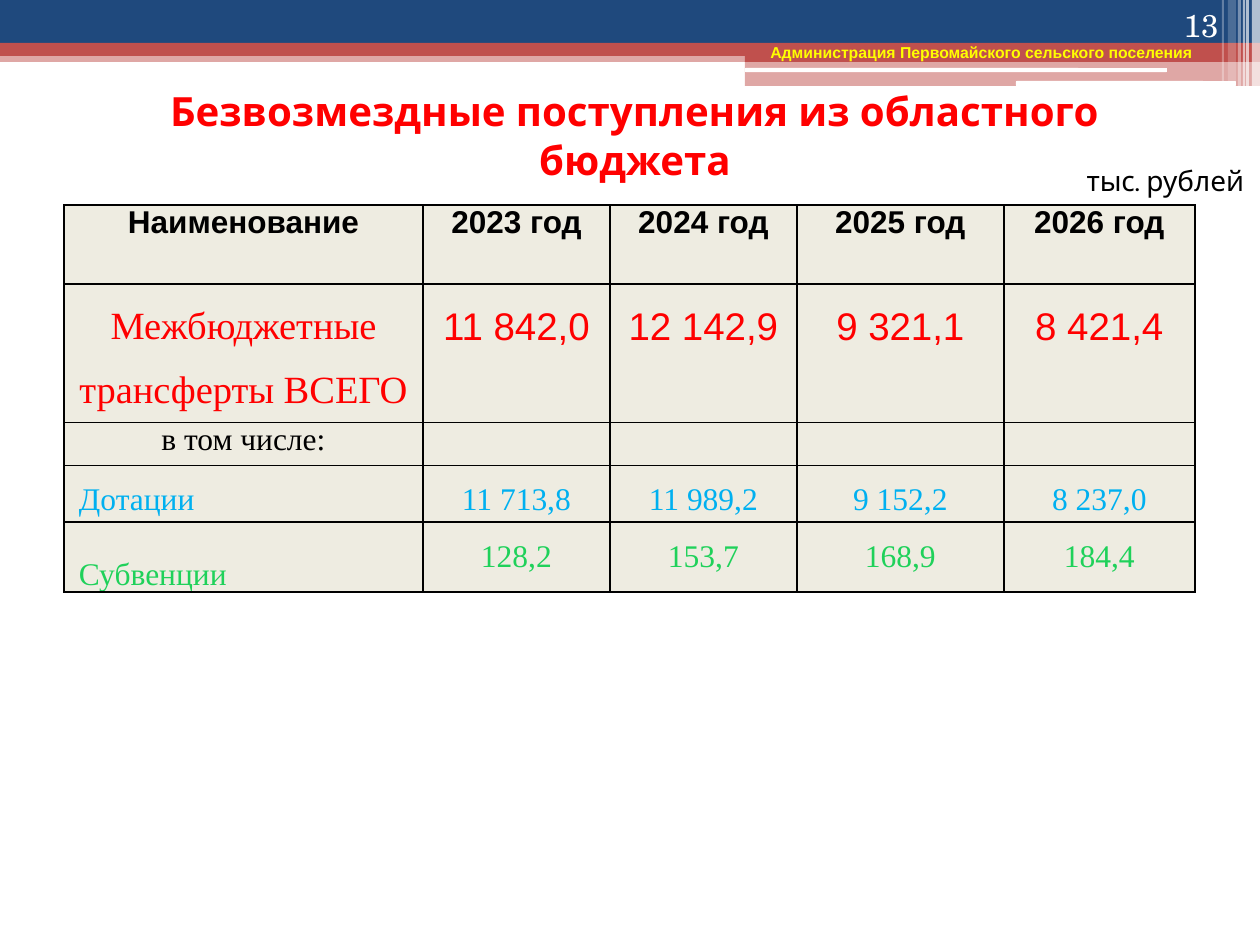
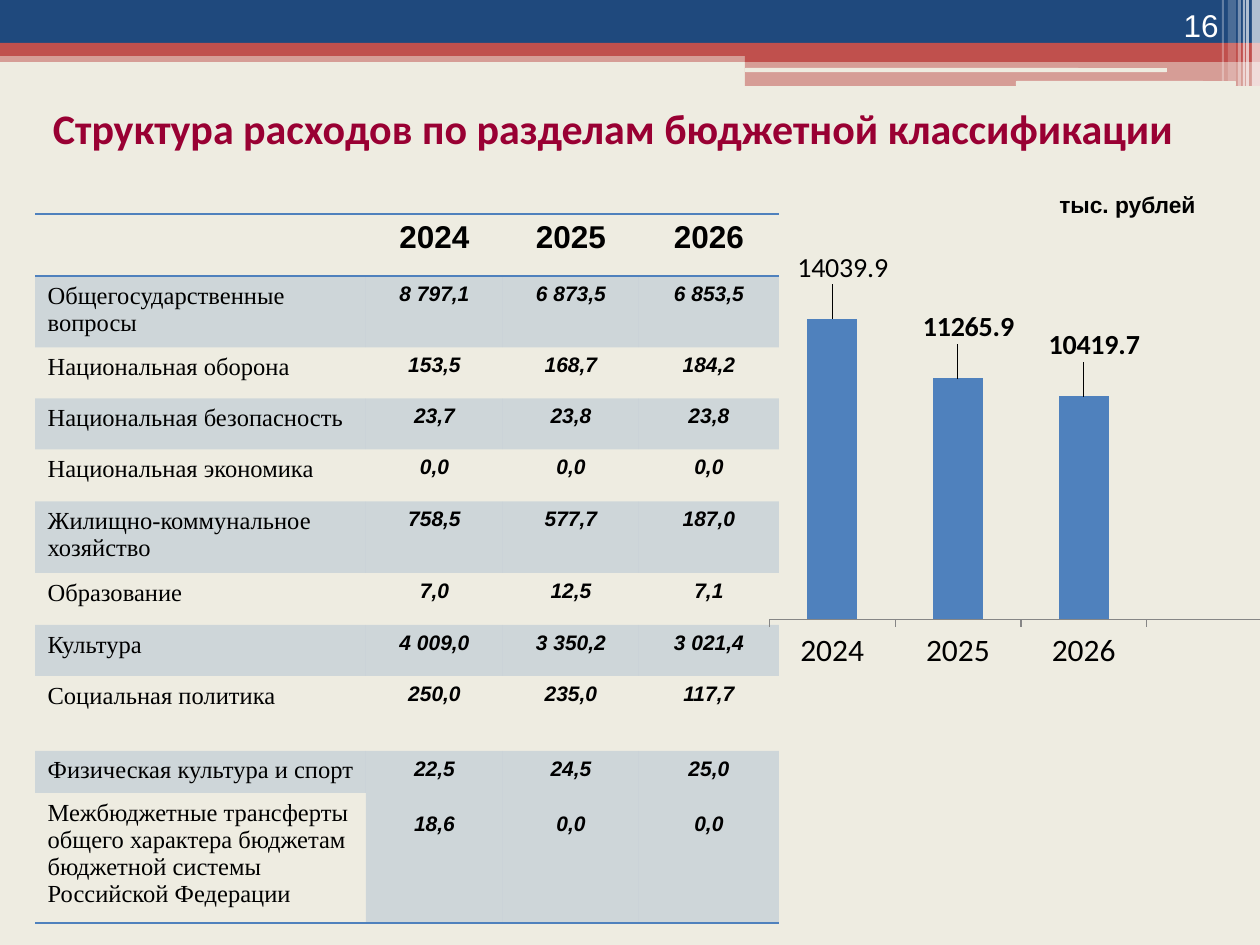
from lxml import etree
from pptx import Presentation
from pptx.chart.data import CategoryChartData
from pptx.dml.color import RGBColor
from pptx.enum.chart import XL_CHART_TYPE, XL_LABEL_POSITION, XL_TICK_MARK
from pptx.enum.shapes import MSO_SHAPE
from pptx.enum.text import MSO_ANCHOR, MSO_AUTO_SIZE, PP_ALIGN
from pptx.oxml import parse_xml
from pptx.oxml.ns import nsdecls, qn
from pptx.util import Pt

PX = 7257
LEFT, CENTER, RIGHT = PP_ALIGN.LEFT, PP_ALIGN.CENTER, PP_ALIGN.RIGHT
TOP, MIDDLE, BOTTOM = MSO_ANCHOR.TOP, MSO_ANCHOR.MIDDLE, MSO_ANCHOR.BOTTOM
RECT, ROUND = MSO_SHAPE.RECTANGLE, MSO_SHAPE.ROUNDED_RECTANGLE
NAVY, BRICK, BLUE, CREAM = "1F497D", "C0504D", "4F81BD", "EEECE1"
WHITE, BLACK, RED, SKY, GREEN = "FFFFFF", "000000", "FF0000", "00B0F0", "1FD15A"
ARIAL, TIMES, KARLA, CALIBRI = "Arial", "Times New Roman", "Karla", "Calibri"
NO_GRID = "{2D5ABB26-0587-4C30-8999-92F81FD0307C}"
rgb = RGBColor.from_string


def paint(fill, colour, opacity=100):
    fill.solid()
    fill.fore_color.rgb = rgb(colour)
    if opacity < 100:
        tint = fill._xPr.find(qn("a:solidFill"))[0]
        etree.SubElement(tint, qn("a:alpha"), val=str(opacity * 1000))


def write(para, text, size, font, colour=BLACK, bold=False, italic=False, align=CENTER):
    para.alignment = align
    span = para.add_run()
    span.text = text
    span.font.size = Pt(size)
    span.font.name = font
    span.font.color.rgb = rgb(colour)
    span.font.bold = bold
    span.font.italic = italic


deck = Presentation()
deck.slide_width, deck.slide_height = 1260 * PX, 945 * PX
title_only = deck.slide_layouts[5]
income = deck.slides.add_slide(title_only)
spending = deck.slides.add_slide(title_only)

bands = [
    (0, 50, 1260, 12, BRICK, 50),
    (0, 0, 1260, 43, NAVY, 100),
    (0, 43, 1260, 13, BRICK, 100),
    (745, 49, 515, 13, BRICK, 100),
    (745, 61, 515, 25, BRICK, 50),
]
gaps = [(745, 68, 422, 4), (1016, 81, 220, 5)]
stripes = [
    (1252, 8, 86, 65), (1246, 3, 86, 65), (1243, 2, 86, 60),
    (1238, 3, 86, 40), (1228, 8, 81, 20), (1222, 2, 81, 30),
]
for page, ground in ((income, WHITE), (spending, CREAM)):
    paint(page.background.fill, ground)
    parts = [(RECT, *band) for band in bands]
    parts += [(ROUND, *gap, ground, 100) for gap in gaps]
    parts += [(RECT, x, 0, w, h, WHITE, opacity) for x, w, h, opacity in stripes]
    for kind, x, y, w, h, colour, opacity in parts:
        shape = page.shapes.add_shape(kind, x * PX, y * PX, w * PX, h * PX)
        shape.shadow.inherit = False
        shape.line.fill.background()
        paint(shape.fill, colour, opacity)

titles = [
    (income, "Безвозмездные поступления из областного бюджета",
     (60, 76, 1150, 118), 23, KARLA, RED),
    (spending, "Структура расходов по разделам бюджетной классификации",
     (0, 96, 1226, 64), 24, CALIBRI, "990033"),
]
for page, text, (x, y, w, h), size, font, colour in titles:
    title = page.shapes.title
    title.left, title.top, title.width, title.height = x * PX, y * PX, w * PX, h * PX
    frame = title.text_frame
    frame.auto_size = MSO_AUTO_SIZE.NONE
    frame.vertical_anchor = MIDDLE
    write(frame.paragraphs[0], text, size, font, colour, bold=True)

number_box, unit = (1126, 0, 105, 50), "тыс. рублей"
labels = [
    (income, "13", number_box, BOTTOM, (18, "TeX Gyre Schola", WHITE, False, False, RIGHT)),
    (income, "Администрация Первомайского сельского поселения", (758, 37, 470, 50), TOP,
     (9, ARIAL, "FFFF00", True, False, LEFT)),
    (income, unit, (1071, 165, 189, 30), MIDDLE, (16, KARLA)),
    (spending, "16", number_box, BOTTOM, (18, ARIAL, WHITE, False, False, RIGHT)),
    (spending, unit, (1047, 185, 189, 40), TOP, (13, ARIAL, BLACK, True, False, LEFT)),
]
for page, text, (x, y, w, h), anchor, style in labels:
    box = page.shapes.add_textbox(x * PX, y * PX, w * PX, h * PX)
    box.text_frame.word_wrap = True
    box.text_frame.vertical_anchor = anchor
    write(box.text_frame.paragraphs[0], text, *style)

income_rows = [
    ["Наименование", "2023 год", "2024 год", "2025 год", "2026 год"],
    ["Межбюджетные трансферты ВСЕГО", "11 842,0", "12 142,9", "9 321,1", "8 421,4"],
    ["в том числе:", "", "", "", ""],
    ["Дотации", "11 713,8", "11 989,2", "9 152,2", "8 237,0"],
    ["Субвенции", "128,2", "153,7", "168,9", "184,4"],
]
spending_rows = [
    ["", "2024", "2025", "2026"],
    ["Общегосударственные вопросы", "8 797,1", "6 873,5", "6 853,5"],
    ["Национальная оборона", "153,5", "168,7", "184,2"],
    ["Национальная безопасность", "23,7", "23,8", "23,8"],
    ["Национальная экономика", "0,0", "0,0", "0,0"],
    ["Жилищно-коммунальное хозяйство", "758,5", "577,7", "187,0"],
    ["Образование", "7,0", "12,5", "7,1"],
    ["Культура", "4 009,0", "3 350,2", "3 021,4"],
    ["Социальная политика", "250,0", "235,0", "117,7"],
    ["Физическая культура и спорт", "22,5", "24,5", "25,0"],
    ["Межбюджетные трансферты общего характера бюджетам бюджетной системы "
     "Российской Федерации", "18,6", "0,0", "0,0"],
]
layouts = [
    (income, 64, 205, [359, 187, 187, 207, 191], [79, 128, 43, 52, 70]),
    (spending, 35, 214, [331, 137, 136, 140],
     [62, 71, 51, 51, 52, 71, 52, 51, 75, 40, 120]),
]
tables = []
for page, x, y, widths, heights in layouts:
    holder = page.shapes.add_table(len(heights), len(widths), x * PX, y * PX,
                                   sum(widths) * PX, sum(heights) * PX)
    table = holder.table
    table.first_row = table.horz_banding = False
    table._tbl.tblPr.find(qn("a:tableStyleId")).text = NO_GRID
    for column, width in zip(table.columns, widths):
        column.width = width * PX
    for row, height in zip(table.rows, heights):
        row.height = height * PX
    tables.append(table)
income_table, spending_table = tables

borders = []
row_colours = [BLACK, RED, BLACK, SKY, GREEN]
for r, values in enumerate(income_rows):
    for c, text in enumerate(values):
        cell = income_table.cell(r, c)
        cell.margin_left = cell.margin_right = cell.margin_top = cell.margin_bottom = 0
        paint(cell.fill, CREAM)
        borders.append((cell, "LRTB", BLACK))
        if not text:
            continue
        para = cell.text_frame.paragraphs[0]
        named_item = c == 0 and r > 2
        font = ARIAL if r == 0 or (r == 1 and c > 0) else TIMES
        write(para, text, 22 if r == 1 else 18, font, row_colours[r], bold=r == 0,
              align=LEFT if named_item else CENTER)
        if named_item:
            cell.margin_left = 15 * PX
        if text == "Субвенции":
            cell.vertical_anchor = BOTTOM
        elif r in (1, 3, 4):
            para.line_spacing = 1.5

last = len(spending_rows) - 1
for c in range(1, 4):
    spending_table.cell(last - 1, c).merge(spending_table.cell(last, c))
for r, values in enumerate(spending_rows):
    for c, text in enumerate(values):
        cell = spending_table.cell(r, c)
        if r % 2 or (r == last and c > 0):
            paint(cell.fill, BLUE, 20)
        else:
            cell.fill.background()
        if r == 0:
            borders.append((cell, "TB", BLUE))
        elif r == last or (r == last - 1 and c > 0):
            borders.append((cell, "B", BLUE))
        if not text:
            continue
        if cell.is_spanned:
            para = spending_table.cell(r - 1, c).text_frame.add_paragraph()
            para.space_before = Pt(18)
        else:
            para = cell.text_frame.paragraphs[0]
        if r == 0:
            write(para, text, 18, ARIAL, bold=True)
        elif c == 0:
            write(para, text, 14, TIMES, align=LEFT)
        else:
            write(para, text, 12, ARIAL, bold=True, italic=True)

for cell, edges, colour in borders:
    properties = cell._tc.get_or_add_tcPr()
    for index, edge in enumerate(edges):
        properties.insert(index, parse_xml(
            f'<a:ln{edge} {nsdecls("a")} w="12700"><a:solidFill>'
            f'<a:srgbClr val="{colour}"/></a:solidFill></a:ln{edge}>'))

totals = CategoryChartData()
totals.categories = ["2024", "2025", "2026", ""]
totals.add_series("Series 1", [14039.9, 11265.9, 10419.7, None])
chart = spending.shapes.add_chart(XL_CHART_TYPE.COLUMN_CLUSTERED, 759 * PX, 251 * PX,
                                  524 * PX, 423 * PX, totals).chart
chart.has_legend = chart.has_title = False
chart.font.size, chart.font.name = Pt(18), CALIBRI
chart.font.color.rgb = rgb(BLACK)
year_axis, value_axis = chart.category_axis, chart.value_axis
year_axis.major_tick_mark = XL_TICK_MARK.OUTSIDE
year_axis.format.line.color.rgb = rgb("868686")
value_axis.visible = value_axis.has_major_gridlines = False
value_axis.minimum_scale, value_axis.maximum_scale = 0, 16000

plot = chart.plots[0]
plot.gap_width, plot.vary_by_categories = 150, False
series = plot.series[0]
paint(series.format.fill, BLUE)
for index in range(3):
    label = series.points[index].data_label
    label.font.size, label.font.name = Pt(16), CALIBRI
    label.font.bold = index > 0
    label.font.color.rgb = rgb(BLACK)
    label.position = XL_LABEL_POSITION.OUTSIDE_END
    label._get_or_add_dLbl().insert(1, parse_xml(
        f'<c:layout {nsdecls("c")}><c:manualLayout><c:x val="0.02"/>'
        '<c:y val="-0.07"/></c:manualLayout></c:layout>'))

plot_area = chart._chartSpace.chart.plotArea
for old in plot_area.findall(qn("c:layout")):
    plot_area.remove(old)
plot_area.insert(0, parse_xml(
    f'<c:layout {nsdecls("c")}><c:manualLayout><c:layoutTarget val="inner"/>'
    '<c:xMode val="edge"/><c:yMode val="edge"/><c:x val="0.02"/><c:y val="0.05"/>'
    '<c:w val="0.96"/><c:h val="0.82"/></c:manualLayout></c:layout>'))

deck.save("out.pptx")
